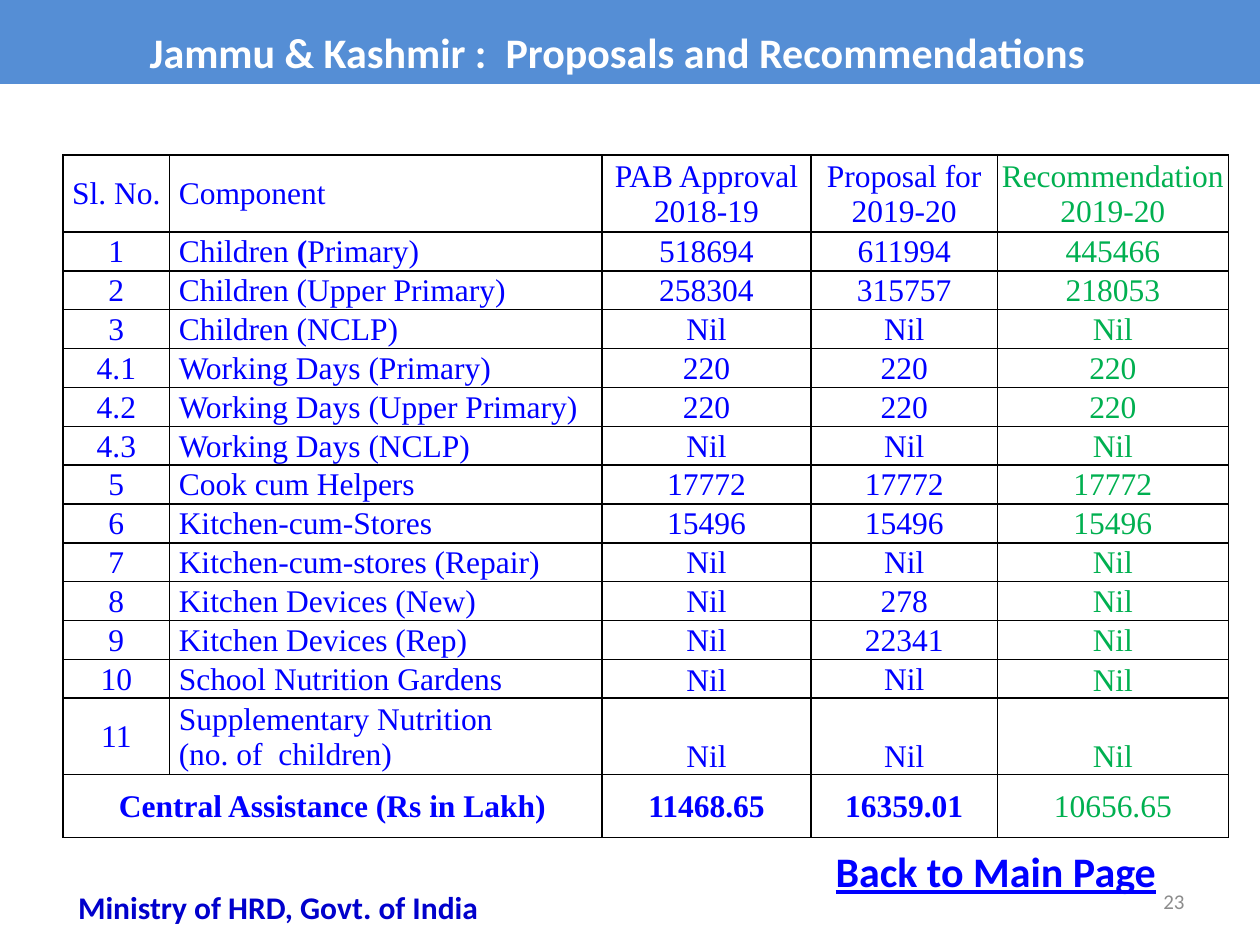
from lxml.etree import SubElement
from pptx import Presentation
from pptx.dml.color import RGBColor
from pptx.enum.text import MSO_ANCHOR, MSO_AUTO_SIZE, PP_ALIGN
from pptx.oxml.ns import qn
from pptx.util import Pt

BANNER_BLUE = RGBColor(0x55, 0x8E, 0xD5)
WHITE = RGBColor(0xFF, 0xFF, 0xFF)
BLUE = RGBColor(0x00, 0x00, 0xFF)
NAVY = RGBColor(0x00, 0x00, 0xCC)
GREEN = RGBColor(0x00, 0xB0, 0x50)
GREY = RGBColor(0x8C, 0x8C, 0x8C)

HEADINGS = ("Sl. No.", "Component", "PAB Approval 2018-19",
            "Proposal for 2019-20", "Recommendation\n2019-20")
COMPONENTS = [
    ("1", "Children* (*Primary)", "518694", "611994", "445466"),
    ("2", "Children (Upper Primary)", "258304", "315757", "218053"),
    ("3", "Children (NCLP)", "Nil", "Nil", "Nil"),
    ("4.1", "Working Days (Primary)", "220", "220", "220"),
    ("4.2", "Working Days (Upper Primary)", "220", "220", "220"),
    ("4.3", "Working Days (NCLP)", "Nil", "Nil", "Nil"),
    ("5", "Cook cum Helpers", "17772", "17772", "17772"),
    ("6", "Kitchen-cum-Stores", "15496", "15496", "15496"),
    ("7", "Kitchen-cum-stores (Repair)", "Nil", "Nil", "Nil"),
    ("8", "Kitchen Devices (New)", "Nil", "278", "Nil"),
    ("9", "Kitchen Devices (Rep)", "Nil", "22341", "Nil"),
    ("10", "School Nutrition Gardens", "Nil", "Nil", "Nil"),
    ("11", "Supplementary Nutrition\n(no. of  children)", "Nil", "Nil", "Nil"),
]
ASSISTANCE = ("Central Assistance (Rs in Lakh)", None,
              "11468.65", "16359.01", "10656.65")
COLUMN_WIDTHS = (61, 247, 119.5, 106.5, 132)
ROW_HEIGHTS = [44] + [22.2] * 12 + [43.7, 36]
BOTTOM_CELLS = {(12, 2), (12, 4), (13, 2), (13, 3), (13, 4)}


def write_text(frame, text, *, font, size, color, bold=False, underline=None,
               align=PP_ALIGN.CENTER, spacing=None):
    """Newlines start paragraphs; pieces between asterisks switch the weight."""
    for number, line in enumerate(text.split("\n")):
        paragraph = frame.paragraphs[0] if number == 0 else frame.add_paragraph()
        paragraph.alignment = align
        paragraph.line_spacing = spacing
        for index, piece in enumerate(line.split("*")):
            run = paragraph.add_run()
            run.text = piece
            run.font.name = font
            run.font.size = Pt(size)
            run.font.color.rgb = color
            run.font.bold = bold != (index % 2 == 1)
            run.font.underline = underline


class SlideBuilder:
    heading_font = "Calibri"
    table_font = "Times New Roman"
    table_size = 18

    def __init__(self, slide):
        self.slide = slide

    def title(self, text, left, top, width, height):
        banner = self.slide.shapes.title
        banner.left, banner.top = Pt(left), Pt(top)
        banner.width, banner.height = Pt(width), Pt(height)
        banner.fill.solid()
        banner.fill.fore_color.rgb = BANNER_BLUE
        frame = banner.text_frame
        frame.auto_size = MSO_AUTO_SIZE.NONE
        frame.vertical_anchor = MSO_ANCHOR.MIDDLE
        frame.margin_right = Pt(18.6)
        write_text(frame, text, font=self.heading_font, size=24, color=WHITE,
                   bold=True, spacing=1.4)

    def label(self, text, left, top, width, height, anchor=MSO_ANCHOR.TOP, **style):
        box = self.slide.shapes.add_textbox(Pt(left), Pt(top), Pt(width), Pt(height))
        box.text_frame.word_wrap = True
        box.text_frame.vertical_anchor = anchor
        write_text(box.text_frame, text, font=self.heading_font, **style)

    def cell(self, cell, text, column, bold, anchor):
        cell.margin_left = Pt(5.2 if column == 1 else 0.72)
        cell.margin_right = cell.margin_top = Pt(0.72)
        cell.margin_bottom = 0
        cell.vertical_anchor = anchor
        self.border(cell)
        cell.fill.solid()
        cell.fill.fore_color.rgb = WHITE
        if text:
            write_text(cell.text_frame, text, font=self.table_font,
                       size=self.table_size, bold=bold,
                       color=GREEN if column == 4 else BLUE,
                       align=PP_ALIGN.LEFT if column == 1 else PP_ALIGN.CENTER)

    def border(self, cell):
        properties = cell._tc.get_or_add_tcPr()
        for side in ("a:lnL", "a:lnR", "a:lnT", "a:lnB"):
            line = SubElement(properties, qn(side), w=str(Pt(1)))
            fill = SubElement(line, qn("a:solidFill"))
            SubElement(fill, qn("a:srgbClr"), val="000000")

    def table(self, rows, left, top):
        table = self.slide.shapes.add_table(
            len(rows), len(COLUMN_WIDTHS), Pt(left), Pt(top),
            Pt(sum(COLUMN_WIDTHS)), Pt(sum(ROW_HEIGHTS))).table
        for column, width in zip(table.columns, COLUMN_WIDTHS):
            column.width = Pt(width)
        for row, height in zip(table.rows, ROW_HEIGHTS):
            row.height = Pt(height)
        last = len(rows) - 1
        for r, values in enumerate(rows):
            for c, text in enumerate(values):
                anchor = (MSO_ANCHOR.BOTTOM if (r, c) in BOTTOM_CELLS
                          else MSO_ANCHOR.MIDDLE)
                self.cell(table.cell(r, c), text, c, r == last and c < 4, anchor)
        table.cell(last, 0).merge(table.cell(last, 1))


def main():
    deck = Presentation()
    deck.slide_width, deck.slide_height = Pt(720), Pt(540)
    builder = SlideBuilder(deck.slides.add_slide(deck.slide_layouts[5]))

    # Banner
    builder.title("Jammu & Kashmir :  Proposals and Recommendations",
                  -3, 0, 723, 48)

    # Proposals and recommendations by component
    builder.table([HEADINGS, *COMPONENTS, ASSISTANCE], 36, 88.6)

    # Footer
    builder.label("23", 516, 500.5, 168, 28.8, anchor=MSO_ANCHOR.MIDDLE,
                  size=12, color=GREY, align=PP_ALIGN.RIGHT)
    builder.label("Ministry of HRD, Govt. of India", 18, 504, 282, 29,
                  size=18, color=NAVY, bold=True)
    builder.label("Back to Main Page", 428, 479.5, 282, 36,
                  size=24, color=BLUE, bold=True, underline=True)

    deck.save("out.pptx")


if __name__ == "__main__":
    main()
